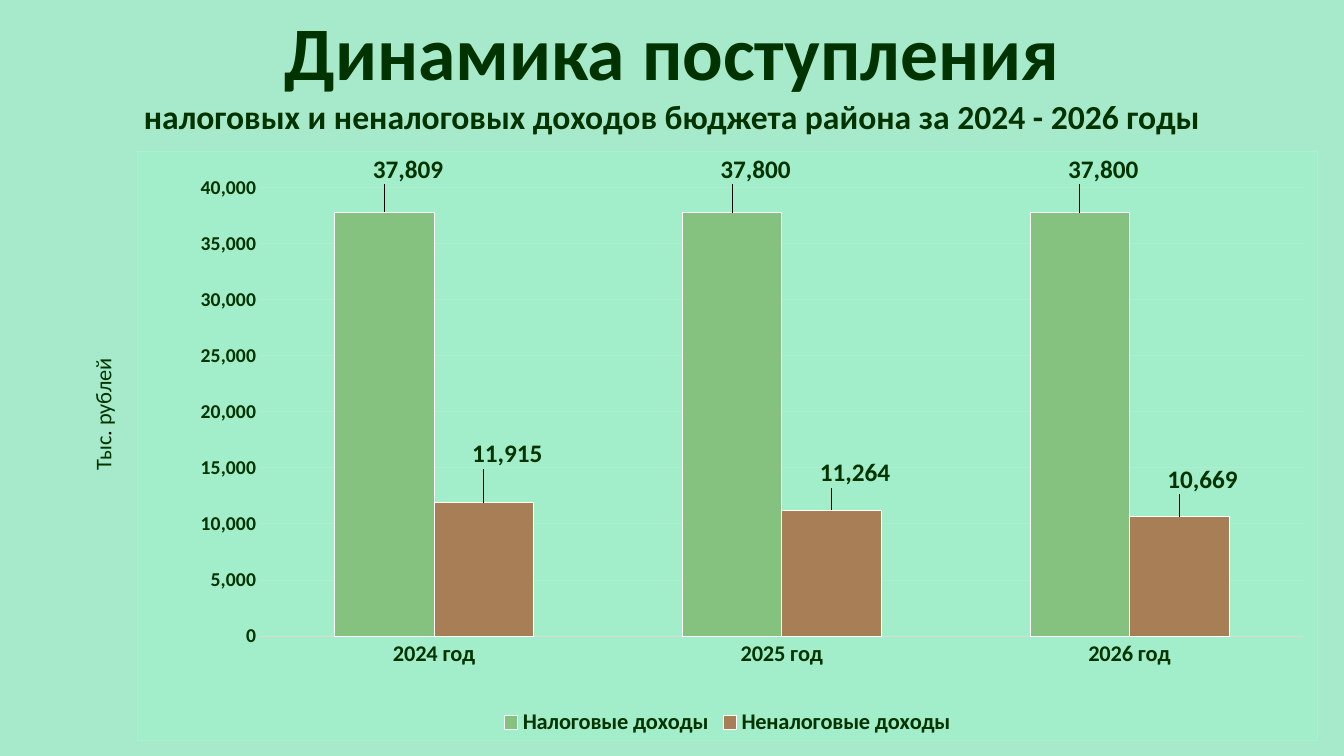
from lxml.etree import SubElement
from pptx import Presentation
from pptx.chart.data import CategoryChartData as Data
from pptx.dml.color import RGBColor as RGB
from pptx.enum.chart import XL_CHART_TYPE as Kind
from pptx.enum.chart import XL_LABEL_POSITION as Spot
from pptx.enum.chart import XL_LEGEND_POSITION as Side
from pptx.enum.chart import XL_TICK_MARK as Tick
from pptx.enum.text import MSO_ANCHOR as Anchor
from pptx.enum.text import MSO_AUTO_SIZE as Auto
from pptx.enum.text import PP_ALIGN as Align
from pptx.oxml import parse_xml
from pptx.oxml.ns import nsdecls, qn
from pptx.util import Emu, Pt

SCALE = 914400 / 100.8
FONT = "Calibri"
FORM = "#,##0"
HUE = {
    "page": "A7EACB", "panel": "A2EDCA", "text": "003300", "grid": "ABEFD0",
    "axis": "D9D9D9", "edge": "FFFFFF", "black": "000000",
}
YEARS = ["2024 год", "2025 год", "2026 год"]
# Name, colour, values, label shifts as shares of the chart
ROWS = [
    ("Налоговые доходы", "85C27F", (37809, 37800, 37800),
     ((0.02, -0.04), (0.02, -0.04), (0.02, -0.04))),
    ("Неналоговые доходы", "A77E56", (11915, 11264, 10669),
     ((0.02, -0.05), (0.02, -0.03), (0.02, -0.03))),
]


def px(n):
    return Emu(round(n * SCALE))


def rgb(name):
    return RGB.from_string(HUE.get(name, name))


def style(font, size, bold=True, hue="text"):
    font.name, font.size, font.bold = FONT, Pt(size), bold
    font.color.rgb = rgb(hue)


def fill(part, hue):
    part.fill.solid()
    part.fill.fore_color.rgb = rgb(hue)


def edge(line, hue, width=0.75):
    line.color.rgb = rgb(hue)
    line.width = Pt(width)


def layout(inner="", **spots):
    marks = "".join(f'<c:{k} val="{v}"/>' for k, v in spots.items())
    return parse_xml(f'<c:layout {nsdecls("c")}><c:manualLayout>{inner}{marks}'
                     '</c:manualLayout></c:layout>')


def add_title(slide, lines):
    box = slide.shapes.title
    box.left, box.top, box.width, box.height = px(0), px(0), px(1344), px(142)
    frame = box.text_frame
    frame.text = "\n".join(text for text, size in lines)
    frame.auto_size, frame.vertical_anchor = Auto.NONE, Anchor.TOP
    for para, (text, size) in zip(frame.paragraphs, lines):
        para.alignment = Align.CENTER
        style(para.runs[0].font, size)


def add_unit(slide, parts):
    box = slide.shapes.add_textbox(px(15), px(374), px(175), px(37))
    box.rotation = 270
    box.text_frame.word_wrap = True
    para = box.text_frame.paragraphs[0]
    for text, hue in parts:
        run = para.add_run()
        run.text = text
        style(run.font, 16, False, hue)


def set_axes(chart):
    for axis, size in ((chart.category_axis, 16), (chart.value_axis, 14)):
        axis.major_tick_mark = axis.minor_tick_mark = Tick.NONE
        style(axis.tick_labels.font, size)
    edge(chart.category_axis.format.line, "axis")
    val = chart.value_axis
    val.minimum_scale, val.maximum_scale, val.major_unit = 0, 40000, 5000
    val.format.line.fill.background()
    val.tick_labels.number_format = FORM
    val.tick_labels.number_format_is_linked = False
    edge(val.major_gridlines.format.line, "grid")


def set_bars(bars, hue, shifts):
    fill(bars.format, hue)
    edge(bars.format.line, "edge", 0.25)
    tags = bars.data_labels
    tags.show_value = True
    tags.number_format, tags.number_format_is_linked = FORM, False
    tags.position = Spot.OUTSIDE_END
    style(tags.font, 18)
    for i, (dx, dy) in enumerate(shifts):
        tag = bars.points[i].data_label
        style(tag.font, 18)
        tag.position = Spot.OUTSIDE_END
    for node, (dx, dy) in zip(tags._element.findall(qn("c:dLbl")), shifts):
        node.insert(1, layout(x=dx, y=dy))


def add_bars(slide):
    data = Data(number_format=FORM)
    data.categories = YEARS
    for name, hue, vals, shifts in ROWS:
        data.add_series(name, vals)
    chart = slide.shapes.add_chart(
        Kind.COLUMN_CLUSTERED, px(137), px(151), px(1181), px(590), data).chart
    chart.has_title = False
    style(chart.font, 10, False, "black")
    set_axes(chart)

    # Legend
    chart.has_legend = True
    chart.legend.position = Side.BOTTOM
    chart.legend.include_in_layout = False
    style(chart.legend.font, 16)

    # Columns
    plot = chart.plots[0]
    plot.gap_width, plot.overlap, plot.vary_by_categories = 150, 0, False
    for bars, (name, hue, vals, shifts) in zip(plot.series, ROWS):
        set_bars(bars, hue, shifts)

    # Plot area and panel
    area = chart._chartSpace.chart.plotArea
    for old in area.findall(qn("c:layout")):
        area.remove(old)
    area.insert(0, layout('<c:layoutTarget val="inner"/>', xMode="edge",
                          yMode="edge", x=0.104, y=0.061, w=0.884, h=0.762))
    panel = parse_xml(f'<c:spPr {nsdecls("c", "a")}/>')
    for tag, host in (("a:solidFill", panel),
                      ("a:solidFill", SubElement(panel, qn("a:ln"), w="9525"))):
        paint = SubElement(host, qn(tag))
        hue = "panel" if host is panel else "grid"
        SubElement(paint, qn("a:srgbClr"), val=HUE[hue])
    panel.insert(0, panel.find(qn("a:solidFill")))
    chart._chartSpace.chart.addnext(panel)


def main():
    deck = Presentation()
    deck.slide_width, deck.slide_height = px(1344), px(756)
    slide = deck.slides.add_slide(deck.slide_layouts[5])
    fill(slide.background, "page")
    add_title(slide, [
        ("Динамика поступления", 54),
        ("налоговых и неналоговых доходов бюджета района за 2024 - 2026 годы", 24),
    ])
    add_bars(slide)
    add_unit(slide, [("Тыс", "text"), (". ", "black"), ("рублей", "text")])
    deck.save("out.pptx")


if __name__ == "__main__":
    main()
